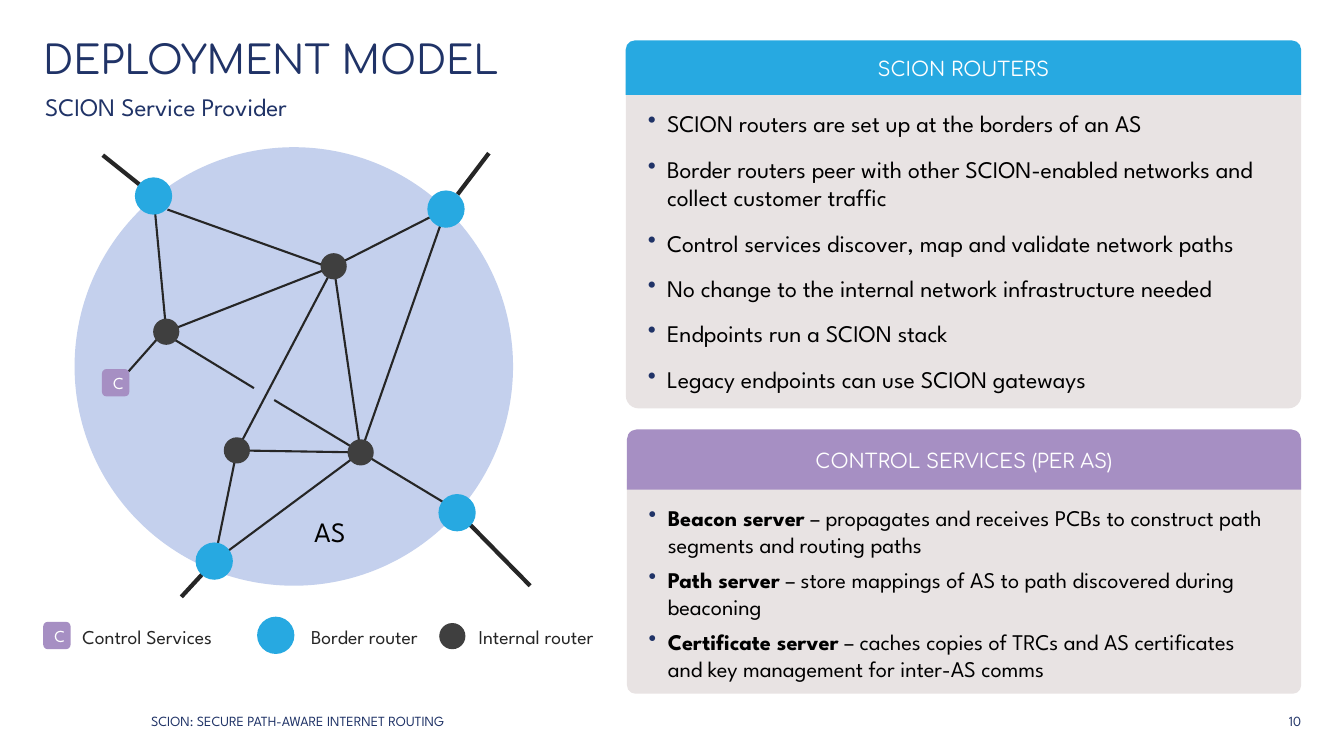
from dataclasses import dataclass

import pptx
import pptx.dml.color
import pptx.enum.shapes
import pptx.enum.text
import pptx.oxml.xmlchemy
import pptx.util
from pptx.util import Cm

SHAPE = pptx.enum.shapes.MSO_SHAPE
ALIGN = pptx.enum.text.PP_ALIGN
ANCHOR = pptx.enum.text.MSO_ANCHOR
GROW = pptx.enum.text.MSO_AUTO_SIZE.SHAPE_TO_FIT_TEXT
BODY, HEADING = "League Spartan", "Comfortaa"
NAVY, BLACK, WHITE, INK = "203367", "000000", "FFFFFF", "262626"
BLUE, PURPLE, GREY, DARK, PALE = "27A9E1", "A68FC3", "E8E3E3", "3F3F3F", "C4D0ED"
BORDER_SIZE, INTERNAL_SIZE, SERVICE_SIZE = 0.94, 0.66, 0.69

Point = tuple[float, float]
Box = tuple[float, float, float, float]


@dataclass
class Style:
    size: float
    color: str
    font: str = BODY
    align: ALIGN = ALIGN.LEFT


@dataclass
class Label:
    text: str
    box: Box
    style: Style
    inset: bool = False
    anchor: ANCHOR = ANCHOR.TOP
    line_spacing: float | None = None


@dataclass
class Node:
    center: Point
    border: bool


@dataclass
class Line:
    start: Point
    end: Point
    width: float = 1.5


@dataclass
class Card:
    title: str
    color: str
    header: Box
    body: Box
    text_box: Box
    size: float
    gap: float
    items: list[tuple[str, str]]


def rgb(value: str) -> pptx.dml.color.RGBColor:
    return pptx.dml.color.RGBColor.from_string(value)


def add_run(p, text: str, style: Style, bold: bool = False) -> None:
    r = p.add_run()
    r.text = text
    fmt = {"size": pptx.util.Pt(style.size), "name": style.font, "bold": bold}
    for name, value in fmt.items():
        setattr(r.font, name, value)
    r.font.color.rgb = rgb(style.color)


def add_shape(s, kind: SHAPE, box: Box, fill: str, adjustments: tuple[float, ...] = ()):
    sp = s.shapes.add_shape(kind, *map(Cm, box))
    sp.shadow.inherit = False
    sp.fill.solid()
    sp.fill.fore_color.rgb = rgb(fill)
    sp.line.fill.background()
    for i, value in enumerate(adjustments):
        sp.adjustments[i] = value
    return sp


def add_caption(sp, text: str, style: Style) -> None:
    tf = sp.text_frame
    tf.vertical_anchor = ANCHOR.MIDDLE
    p = tf.paragraphs[0]
    p.alignment = style.align
    add_run(p, text, style)


def add_label(s, label: Label) -> None:
    tf = s.shapes.add_textbox(*map(Cm, label.box)).text_frame
    fmt = {"word_wrap": True, "vertical_anchor": label.anchor}
    if label.inset:
        fmt["auto_size"] = GROW
    else:
        fmt |= {f"margin_{side}": 0 for side in ("left", "right", "top", "bottom")}
    for name, value in fmt.items():
        setattr(tf, name, value)
    p = tf.paragraphs[0]
    p.alignment = label.style.align
    if label.line_spacing:
        p.line_spacing = label.line_spacing
    add_run(p, label.text, label.style)


def add_line(s, line: Line) -> None:
    c = s.shapes.add_connector(
        pptx.enum.shapes.MSO_CONNECTOR.STRAIGHT, *map(Cm, line.start + line.end))
    c.line.width = pptx.util.Pt(line.width)
    c.line.color.rgb = rgb(INK)
    c._element.spPr.append(pptx.oxml.xmlchemy.OxmlElement("a:effectLst"))


def add_node(s, node: Node) -> None:
    size = BORDER_SIZE if node.border else INTERNAL_SIZE
    x, y = node.center
    add_shape(s, SHAPE.OVAL, (x - size / 2, y - size / 2, size, size),
              BLUE if node.border else DARK)


def add_service(s, corner: Point) -> None:
    sp = add_shape(s, SHAPE.ROUNDED_RECTANGLE, corner + (SERVICE_SIZE, SERVICE_SIZE),
                   PURPLE, (0.167,))
    add_caption(sp, "C", Style(12, WHITE, align=ALIGN.CENTER))


def add_bullet(p) -> None:
    pPr = p._p.get_or_add_pPr()
    pPr.set("marL", str(int(Cm(0.48))))
    pPr.set("indent", str(-int(Cm(0.48))))
    color = pptx.oxml.xmlchemy.OxmlElement("a:buClr")
    value = pptx.oxml.xmlchemy.OxmlElement("a:srgbClr")
    value.set("val", NAVY)
    color.append(value)
    char = pptx.oxml.xmlchemy.OxmlElement("a:buChar")
    char.set("char", "•")
    pPr.extend([color, char])


def add_card(s, card: Card) -> None:
    body = add_shape(s, SHAPE.ROUND_2_SAME_RECTANGLE, card.body, GREY, (0.039, 0))
    body.rotation = 180
    header = add_shape(s, SHAPE.ROUND_2_SAME_RECTANGLE, card.header, card.color, (0.167, 0))
    add_caption(header, card.title, Style(14, WHITE, HEADING, ALIGN.CENTER))
    tf = s.shapes.add_textbox(*map(Cm, card.text_box)).text_frame
    tf.word_wrap = True
    tf.auto_size = GROW
    style = Style(card.size, BLACK)
    for i, (lead, rest) in enumerate(card.items):
        p = tf.add_paragraph() if i else tf.paragraphs[0]
        add_bullet(p)
        if i:
            p.space_before = pptx.util.Pt(card.gap)
        if lead:
            add_run(p, lead, style, bold=True)
        add_run(p, rest, style)


NODES = {
    "north_west": Node((3.87, 4.94), True),
    "north_east": Node((11.24, 5.27), True),
    "south_east": Node((11.52, 12.92), True),
    "south_west": Node((5.4, 14.14), True),
    "west": Node((4.19, 8.36), False),
    "top": Node((8.41, 6.71), False),
    "east": Node((9.09, 11.4), False),
    "bottom": Node((5.97, 11.35), False),
}
LINKS = [
    ("north_east", "east"), ("north_east", "top"), ("top", "west"),
    ("west", "north_west"), ("top", "bottom"), ("east", "bottom"),
    ("east", "south_west"), ("south_west", "bottom"), ("top", "east"),
]
LINES = [Line(NODES[a].center, NODES[b].center) for a, b in LINKS] + [
    Line((8.36, 6.76), (4.22, 5.28)),
    Line((3.94, 8.28), (6.4, 9.78)),
    Line((6.91, 10.08), (11.3, 12.73)),
    Line((3, 9.63), (3.99, 8.51)),
    Line((11.53, 4.9), (12.32, 3.86), 3),
    Line((11.61, 12.98), (13.36, 14.76), 3),
    Line((5.28, 14.27), (4.57, 15.04), 3),
    Line((2.59, 3.91), (3.89, 4.95), 3),
]
LEGEND_NODES = [Node((6.95, 16.01), True), Node((11.4, 16.03), False)]
LEGEND_TEXTS = [("Control Services", 1.83), ("Border router", 7.59), ("Internal router", 11.81)]
LABELS = [
    Label("DEPLOYMENT MODEL", (1.09, 1.02, 14.15, 0.99), Style(28, NAVY, HEADING),
          line_spacing=0.9),
    Label("SCION Service Provider", (1.14, 2.29, 14.1, 1.02), Style(18, NAVY)),
    Label("AS", (7.49, 12.83, 1.65, 1.12), Style(20, BLACK, align=ALIGN.CENTER), True),
    Label("SCION: SECURE PATH-AWARE INTERNET ROUTING", (3.81, 17.65, 11.43, 1.02),
          Style(10, NAVY), anchor=ANCHOR.MIDDLE),
    Label("10", (25.17, 17.65, 7.62, 1.02), Style(10, NAVY, align=ALIGN.RIGHT),
          anchor=ANCHOR.MIDDLE),
] + [Label(text, (x, 15.62, 4.37, 0.86), Style(14, INK), True) for text, x in LEGEND_TEXTS]
CARDS = [
    Card("CONTROL SERVICES (PER AS)", PURPLE, (15.8, 10.82, 16.99, 1.52),
         (15.8, 12.07, 16.99, 5.41), (16.1, 12.57, 16.21, 4.78), 16, 6, [
             ("Beacon server",
              " – propagates and receives PCBs to construct path segments and routing paths"),
             ("Path server", " – store mappings of AS to path discovered during beaconing"),
             ("Certificate server", " – caches copies of TRCs and AS certificates "
              "and key management for inter-AS comms")]),
    Card("SCION ROUTERS", BLUE, (15.77, 1.02, 17.02, 1.37),
         (15.77, 2.11, 17.02, 8.18), (16.08, 2.62, 16.41, 6.76), 17, 12, [("", text) for text in (
             "SCION routers are set up at the borders of an AS",
             "Border routers peer with other SCION-enabled networks and collect customer traffic",
             "Control services discover, map and validate network paths",
             "No change to the internal network infrastructure needed",
             "Endpoints run a SCION stack",
             "Legacy endpoints can use SCION gateways")]),
]


def main() -> None:
    prs = pptx.Presentation()
    prs.slide_width, prs.slide_height = Cm(33.87), Cm(19.05)
    s = prs.slides.add_slide(prs.slide_layouts[6])
    add_shape(s, SHAPE.OVAL, (1.88, 3.71, 11.05, 11.05), PALE)
    for line in LINES:
        add_line(s, line)
    for node in [*NODES.values(), *LEGEND_NODES]:
        add_node(s, node)
    for corner in [(2.57, 9.3), (1.09, 15.67)]:
        add_service(s, corner)
    for card in CARDS:
        add_card(s, card)
    for label in LABELS:
        add_label(s, label)
    prs.save("out.pptx")


if __name__ == "__main__":
    main()
